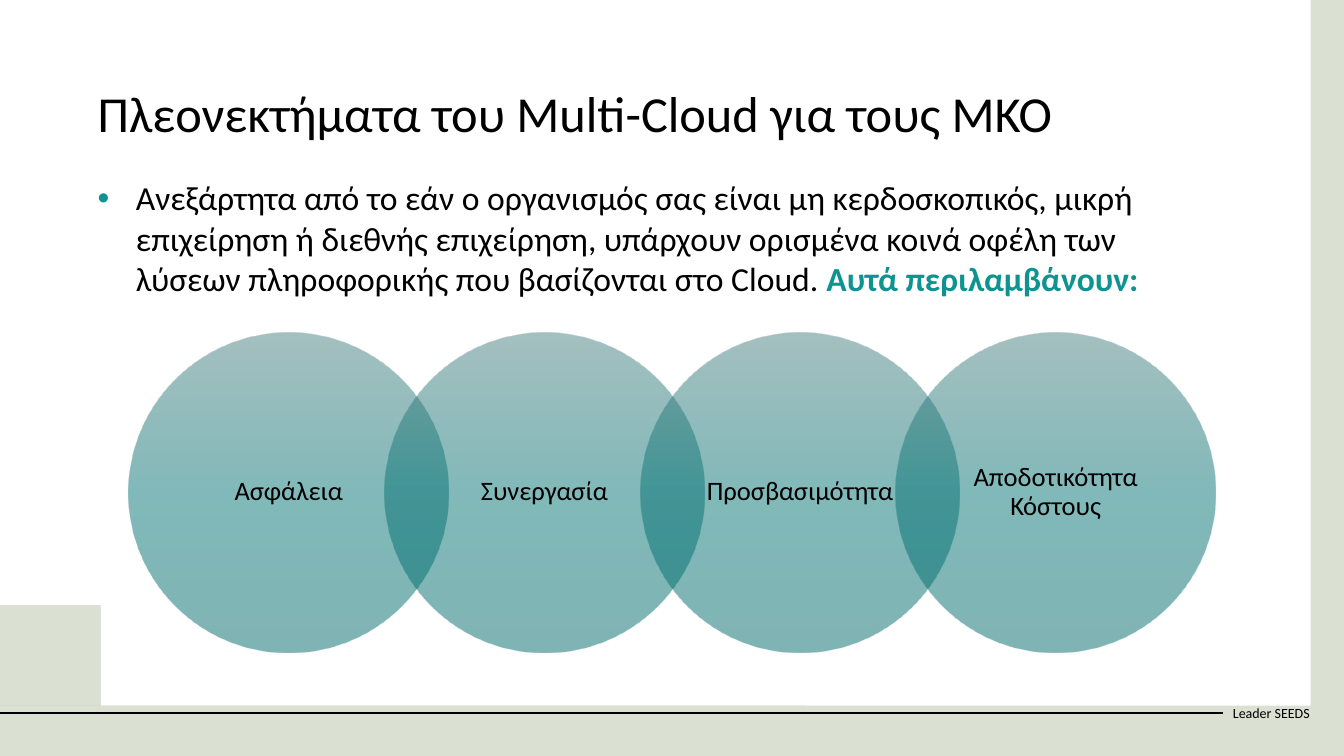
from lxml import etree
from pptx import Presentation
from pptx.dml.color import RGBColor
from pptx.enum.shapes import MSO_CONNECTOR, MSO_SHAPE
from pptx.enum.text import MSO_ANCHOR, PP_ALIGN
from pptx.oxml import parse_xml
from pptx.oxml.ns import nsdecls, qn
from pptx.util import Inches, Pt

TITLE = "Πλεονεκτήματα του Multi-Cloud για τους ΜΚΟ"
INTRO = (
    "Ανεξάρτητα από το εάν ο οργανισμός σας είναι μη κερδοσκοπικός, μικρή "
    "επιχείρηση ή διεθνής επιχείρηση, υπάρχουν ορισμένα κοινά οφέλη των "
    "λύσεων πληροφορικής που βασίζονται στο Cloud. "
)
INTRO_END = "Αυτά περιλαμβάνουν:"
BENEFITS = ["Ασφάλεια", "Συνεργασία", "Προσβασιμότητα", "Αποδοτικότητα Κόστους"]
FOOTER = "Leader SEEDS"

FONT = "Calibri"
COLORS = {
    "backdrop": "DAE0D2",
    "panel": "FFFFFF",
    "bar": "AABC99",
    "text": "000000",
    "accent": "0D9390",
}
CIRCLE_STOPS = [(0, "4B8081"), (50, "037273"), (100, "006869")]
CIRCLE_OPACITY = 50

PANEL = [
    (0.35, 0.37),
    (12.2, 0.37),
    (12.65, 0.37, 13.01, 0.69, 13.01, 1.08),
    (13.01, 6.87),
    (2.05, 6.87),
    (1.11, 6.87, 0.35, 6.2, 0.35, 5.38),
]
BAR = [
    (0, 7.23),
    (0, 6.51),
    (7.13, 6.51),
    (7.34, 6.51, 7.51, 6.69, 7.51, 6.9),
    (7.51, 7.23),
]
CURVE_STEPS = 24

CIRCLE_LEFT, CIRCLE_TOP, CIRCLE_SIZE, CIRCLE_PITCH = 1.28, 3.3, 3.17, 2.535
LABEL_SIZE = 2.24
LABEL_INSET = (CIRCLE_SIZE - LABEL_SIZE) / 2


def rgb(name):
    return RGBColor.from_string(COLORS[name])


def paint(shape, color):
    shape.shadow.inherit = False
    shape.fill.solid()
    shape.fill.fore_color.rgb = rgb(color)
    shape.line.fill.background()


def curve_points(start, curve):
    x1, y1, x2, y2, x3, y3 = curve
    for step in range(1, CURVE_STEPS + 1):
        t = step / CURVE_STEPS
        u = 1 - t
        weights = (u**3, 3 * u * u * t, 3 * u * t * t, t**3)
        yield tuple(
            sum(w * v for w, v in zip(weights, values))
            for values in ((start[0], x1, x2, x3), (start[1], y1, y2, y3))
        )


def add_outline(page, segments, color):
    points = [segments[0]]
    for segment in segments[1:]:
        if len(segment) == 2:
            points.append(segment)
        else:
            points.extend(curve_points(points[-1], segment))
    builder = page.shapes.build_freeform(*points[0], scale=Inches(1))
    builder.add_line_segments(points[1:], close=True)
    paint(builder.convert_to_shape(), color)


def add_text(page, place, text, size, anchor=MSO_ANCHOR.TOP):
    box = page.shapes.add_textbox(*map(Inches, place))
    frame = box.text_frame
    frame.word_wrap = True
    frame.vertical_anchor = anchor
    para = frame.paragraphs[0]
    para.add_run().text = text
    para.font.name = FONT
    para.font.size = Pt(size)
    para.font.color.rgb = rgb("text")
    return frame, para


def add_bullet(para, indent):
    props = para._p.get_or_add_pPr()
    props.set("marL", str(Inches(indent)))
    props.set("indent", str(-Inches(indent)))
    bullet = (
        f'<a:buClr {nsdecls("a")}><a:srgbClr val="{COLORS["accent"]}"/></a:buClr>',
        f'<a:buFont {nsdecls("a")} typeface="Arial"/>',
        f'<a:buChar {nsdecls("a")} char="•"/>',
    )
    for position, xml in enumerate(bullet):
        props.insert(position, parse_xml(xml))


def add_circle(page, left):
    circle = page.shapes.add_shape(
        MSO_SHAPE.OVAL, *map(Inches, (left, CIRCLE_TOP, CIRCLE_SIZE, CIRCLE_SIZE))
    )
    circle.shadow.inherit = False
    circle.line.fill.background()
    stops = "".join(
        f'<a:gs pos="{place * 1000}"><a:srgbClr val="{color}">'
        f'<a:alpha val="{CIRCLE_OPACITY * 1000}"/></a:srgbClr></a:gs>'
        for place, color in CIRCLE_STOPS
    )
    gradient = parse_xml(
        f'<a:gradFill {nsdecls("a")} rotWithShape="1"><a:gsLst>{stops}</a:gsLst>'
        '<a:lin ang="5400000" scaled="0"/></a:gradFill>'
    )
    circle._element.spPr.find(qn("a:prstGeom")).addnext(gradient)


def add_label(page, left, text):
    place = (left + LABEL_INSET, CIRCLE_TOP + LABEL_INSET, LABEL_SIZE, LABEL_SIZE)
    frame, para = add_text(page, place, text, 19, MSO_ANCHOR.MIDDLE)
    frame.margin_left = frame.margin_right = Inches(0.17)
    frame.margin_top = frame.margin_bottom = Inches(0.03)
    para.alignment = PP_ALIGN.CENTER
    para.line_spacing = 0.9


def main():
    deck = Presentation()
    deck.slide_width, deck.slide_height = Inches(13.33), Inches(7.5)
    page = deck.slides.add_slide(deck.slide_layouts[6])

    backdrop = page.shapes.add_shape(
        MSO_SHAPE.RECTANGLE, 0, 0, deck.slide_width, deck.slide_height
    )
    paint(backdrop, "backdrop")
    add_outline(page, PANEL, "panel")

    add_text(page, (12.13, 6.87, 1.01, 0.4), FOOTER, 10, MSO_ANCHOR.MIDDLE)
    rule = page.shapes.add_connector(
        MSO_CONNECTOR.STRAIGHT, *map(Inches, (0, 7.07, 12.13, 7.07))
    )
    rule.line.color.rgb = rgb("text")
    rule.line.width = Pt(1.5)
    etree.SubElement(rule._element.spPr, qn("a:effectLst"))
    add_outline(page, BAR, "bar")

    _, title = add_text(page, (0.87, 0.83, 11.59, 0.88), TITLE, 36)
    title.line_spacing = 0.9

    _, intro = add_text(page, (0.87, 1.71, 11.22, 1.31), INTRO, 24)
    add_bullet(intro, 0.38)
    ending = intro.add_run()
    ending.text = INTRO_END
    ending.font.bold = True
    ending.font.color.rgb = rgb("accent")

    for index, benefit in enumerate(BENEFITS):
        left = CIRCLE_LEFT + index * CIRCLE_PITCH
        add_circle(page, left)
        add_label(page, left, benefit)

    deck.save("out.pptx")


if __name__ == "__main__":
    main()
